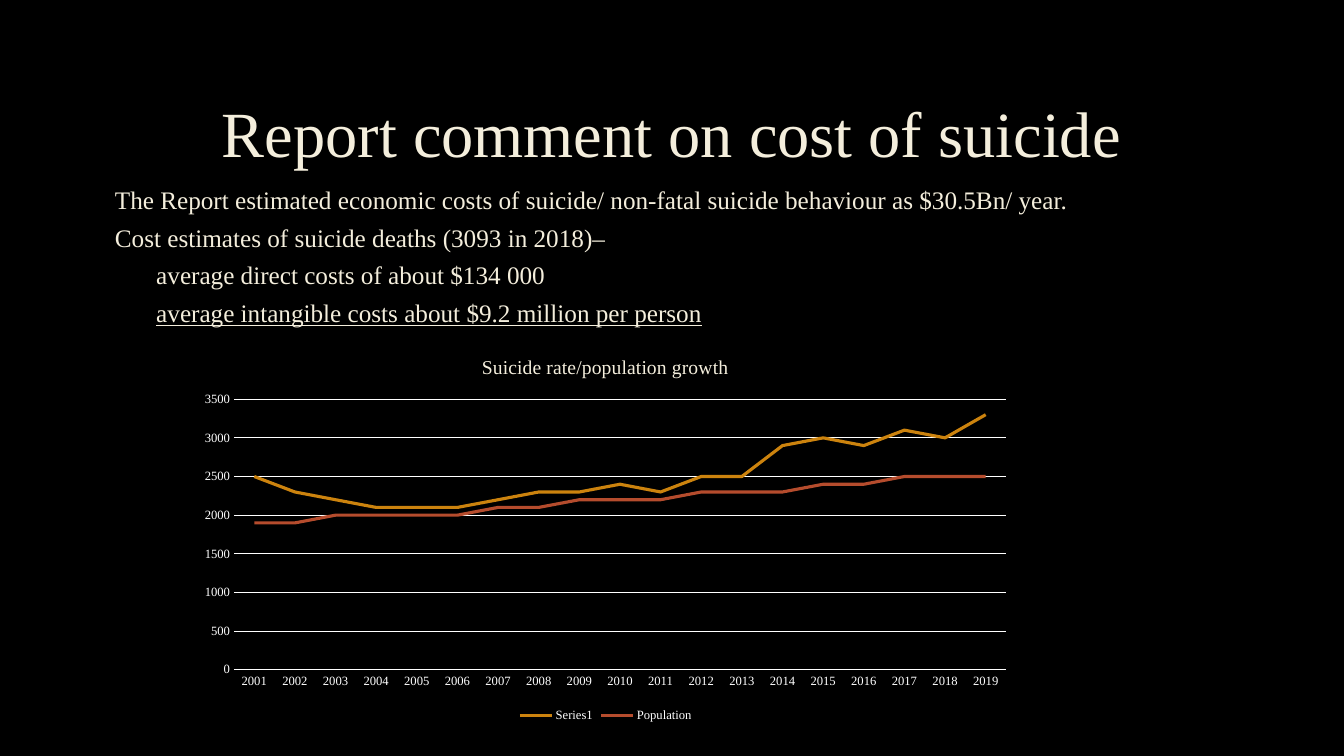
"""Build the slide on the cost of suicide, with its line chart."""
import pptx
import pptx.chart.data
import pptx.dml.color
import pptx.enum.chart
import pptx.enum.text
import pptx.oxml
import pptx.oxml.ns
import pptx.util

Pt = pptx.util.Pt
FONT = "Times New Roman"
COLOURS = {
    "background": "000000",
    "cream": "F4EEDC",
    "white": "FFFFFF",
    "amber": "CC830E",
    "rust": "B54C2D",
}
CHART_WIDTH, CHART_HEIGHT = 596.15, 277.9


def style(font, size, colour):
    font.name = FONT
    font.size = Pt(size)
    font.color.rgb = pptx.dml.color.RGBColor.from_string(COLOURS[colour])


def place(parent, index, **settings):
    for old in parent.findall(pptx.oxml.ns.qn("c:layout")):
        parent.remove(old)
    entries = "".join(f'<c:{key} val="{value}"/>' for key, value in settings.items())
    parent.insert(index, pptx.oxml.parse_xml(
        f'<c:layout {pptx.oxml.ns.nsdecls("c")}>'
        f"<c:manualLayout>{entries}</c:manualLayout></c:layout>"))


deck = pptx.Presentation()
deck.slide_width, deck.slide_height = Pt(960), Pt(540)
slide = deck.slides.add_slide(deck.slide_layouts[1])
slide.background.fill.solid()
slide.background.fill.fore_color.rgb = pptx.dml.color.RGBColor.from_string(COLOURS["background"])

heading = slide.shapes.title
heading.left, heading.top, heading.width, heading.height = Pt(72), Pt(48.25), Pt(815), Pt(99.35)
heading.text_frame.auto_size = pptx.enum.text.MSO_AUTO_SIZE.NONE
heading.text_frame.vertical_anchor = pptx.enum.text.MSO_ANCHOR.MIDDLE
heading_line = heading.text_frame.paragraphs[0]
heading_line.alignment = pptx.enum.text.PP_ALIGN.CENTER
heading_line.line_spacing = 0.9
heading_run = heading_line.add_run()
heading_run.text = "Report comment on cost of suicide"
style(heading_run.font, 46, "cream")

costs = slide.placeholders[1]
costs.left, costs.top, costs.width, costs.height = Pt(72), Pt(134.5), Pt(815), Pt(396.7)
costs.text_frame.auto_size = pptx.enum.text.MSO_AUTO_SIZE.NONE
statements = [
    (0, False, "The Report estimated economic costs of suicide/ non‑fatal suicide behaviour as $30.5Bn/ year."),
    (0, False, "Cost estimates of suicide deaths (3093 in 2018)–"),
    (1, False, "average direct costs of about $134 000"),
    (1, True, "average intangible costs about $9.2 million per person"),
]
for number, (level, underlined, wording) in enumerate(statements):
    statement = costs.text_frame.paragraphs[0] if number == 0 else costs.text_frame.add_paragraph()
    statement.level = level
    statement.alignment = pptx.enum.text.PP_ALIGN.JUSTIFY
    statement.line_spacing = Pt(15)
    statement.space_before = Pt(12)
    statement.space_after = Pt(6 if underlined else 0)
    properties = statement._p.get_or_add_pPr()
    properties.set("marL", str(Pt(32.4 if level else 2.9)))
    properties.set("indent", "0")
    properties.append(pptx.oxml.parse_xml(f'<a:buNone {pptx.oxml.ns.nsdecls("a")}/>'))
    statement_run = statement.add_run()
    statement_run.text = wording
    style(statement_run.font, 18, "cream")
    if underlined:
        statement_run.font.underline = True

growth = pptx.chart.data.CategoryChartData()
growth.categories = [str(year) for year in range(2001, 2020)]
growth.add_series("Series1", [
    2500, 2300, 2200, 2100, 2100, 2100, 2200, 2300, 2300, 2400,
    2300, 2500, 2500, 2900, 3000, 2900, 3100, 3000, 3300])
growth.add_series("Population", [
    1900, 1900, 2000, 2000, 2000, 2000, 2100, 2100, 2200, 2200,
    2200, 2300, 2300, 2300, 2400, 2400, 2500, 2500, 2500])
chart = slide.shapes.add_chart(
    pptx.enum.chart.XL_CHART_TYPE.LINE,
    Pt(134.65), Pt(241.2), Pt(CHART_WIDTH), Pt(CHART_HEIGHT), growth).chart
style(chart.font, 10, "white")

chart.has_title = True
chart_heading = chart.chart_title.text_frame.paragraphs[0].add_run()
chart_heading.text = "Suicide rate/population growth"
style(chart_heading.font, 14, "cream")
chart_heading.font.bold = False
chart.chart_title.include_in_layout = False

chart.has_legend = True
chart.legend.position = pptx.enum.chart.XL_LEGEND_POSITION.BOTTOM
chart.legend.include_in_layout = False
style(chart.legend.font, 9, "white")

years, counts = chart.category_axis, chart.value_axis
counts.minimum_scale, counts.maximum_scale, counts.major_unit = 0, 3500, 500
counts.has_major_gridlines = True
for axis in (years, counts):
    axis.major_tick_mark = axis.minor_tick_mark = pptx.enum.chart.XL_TICK_MARK.NONE
    style(axis.tick_labels.font, 9, "white")
for rule in (years.format.line, counts.major_gridlines.format.line):
    rule.width = Pt(0.75)
    rule.color.rgb = pptx.dml.color.RGBColor.from_string(COLOURS["white"])
counts.format.line.fill.background()

chart.plots[0].vary_by_categories = False
for trend, colour in zip(chart.plots[0].series, ("amber", "rust")):
    trend.smooth = False
    trend.marker.style = pptx.enum.chart.XL_MARKER_STYLE.NONE
    trend.format.line.width = Pt(2.25)
    trend.format.line.color.rgb = pptx.dml.color.RGBColor.from_string(COLOURS[colour])

place(chart.element.xpath("c:chart/c:title")[0], 1, xMode="edge", yMode="edge",
      x=207 / CHART_WIDTH, y=9.5 / CHART_HEIGHT)
place(chart.element.xpath("c:chart/c:plotArea")[0], 0, layoutTarget="inner",
      xMode="edge", yMode="edge", x=32.5 / CHART_WIDTH, y=44 / CHART_HEIGHT,
      w=551.5 / CHART_WIDTH, h=193.25 / CHART_HEIGHT)

deck.save("out.pptx")
